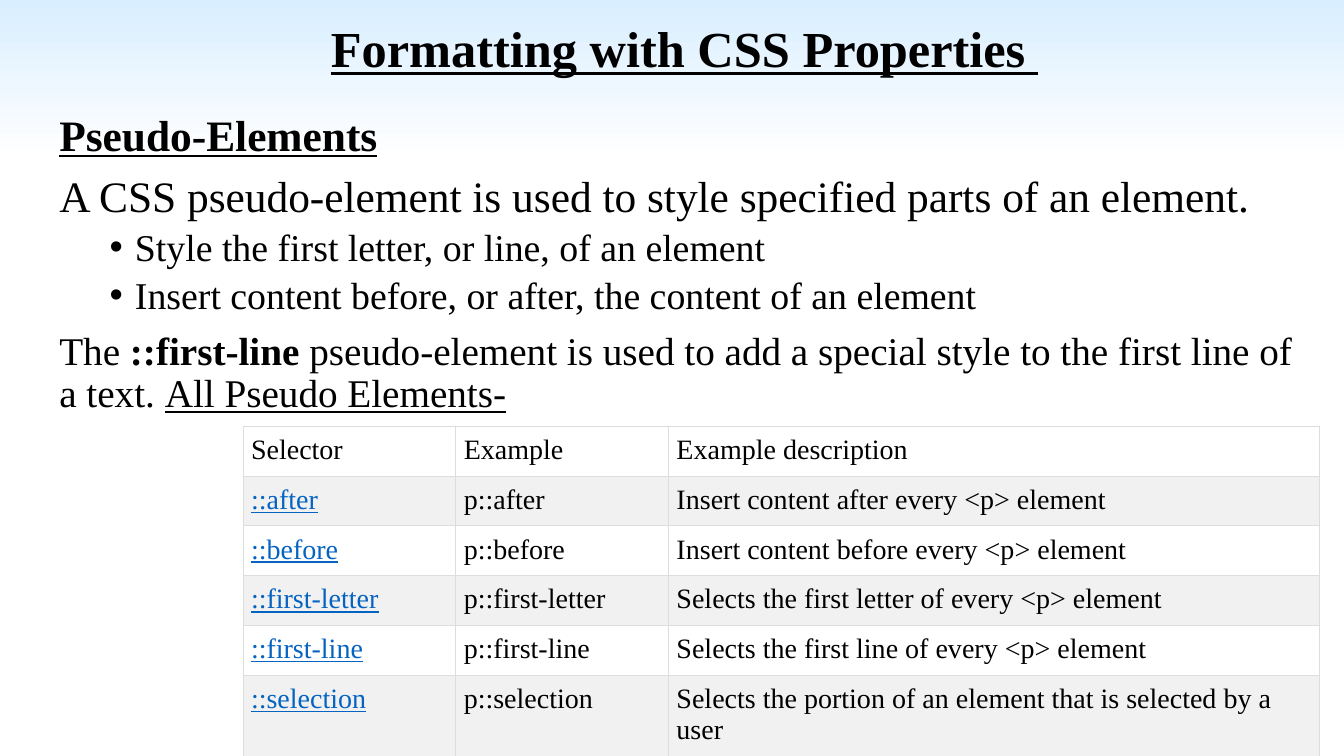
from lxml import etree
from pptx import Presentation, util as u
from pptx.dml.color import RGBColor
from pptx.enum import text
from pptx.oxml import ns, parse_xml

FONT = "Times New Roman"
BLACK, LINK, GRID = "000000", "0563C1", "DDDDDD"
SKY, WHITE, BAND = "D9EEFF", "FFFFFF", "F1F1F1"

HEADING = "Formatting with CSS Properties "
PLAIN, BOLD, UNDERLINED, STRONG = (False, False), (True, False), (False, True), (True, True)
EXPLANATION = [
    (0, 31, [("Pseudo-Elements", STRONG)]),
    (0, 31, [("A CSS pseudo-element is used to style specified parts of an element.", PLAIN)]),
    (1, 27, [("Style the first letter, or line, of an element", PLAIN)]),
    (1, 27, [("Insert content before, or after, the content of an element", PLAIN)]),
    (0, 28, [
        ("The ", PLAIN),
        ("::first-line ", BOLD),
        ("pseudo-element is used to add a special style to the first line of a text. ", PLAIN),
        ("All Pseudo Elements-", UNDERLINED),
    ]),
]
SELECTORS = [
    ("Selector", "Example", "Example description"),
    ("::after", "p::after", "Insert content after every <p> element"),
    ("::before", "p::before", "Insert content before every <p> element"),
    ("::first-letter", "p::first-letter", "Selects the first letter of every <p> element"),
    ("::first-line", "p::first-line", "Selects the first line of every <p> element"),
    ("::selection", "p::selection", "Selects the portion of an element that is selected by a user"),
]
COLUMN_WIDTHS = (2.11, 2.11, 6.46)
ROW_HEIGHTS = (0.33, 0.41, 0.41, 0.41, 0.41, 0.54)
MARGIN, TEXT_WIDTH = 0.49, 12.6


def colour(value):
    return RGBColor.from_string(value)


def style(run, size, weight=PLAIN, ink=BLACK):
    run.font.name = FONT
    run.font.size = u.Pt(size)
    run.font.bold, run.font.underline = weight
    run.font.color.rgb = colour(ink)


def add_bullet(paragraph):
    props = paragraph._p.get_or_add_pPr()
    props.set("marL", str(u.Inches(0.75)))
    props.set("indent", str(u.Inches(-0.25)))
    etree.SubElement(props, ns.qn("a:buFont")).set("typeface", "Arial")
    etree.SubElement(props, ns.qn("a:buChar")).set("char", "•")


def add_borders(cell):
    for side in ("lnL", "lnR", "lnT", "lnB"):
        cell._tc.get_or_add_tcPr().append(parse_xml(
            f'<a:{side} {ns.nsdecls("a")} w="{u.Pt(0.75)}"><a:solidFill>'
            f'<a:srgbClr val="{GRID}"/></a:solidFill></a:{side}>'))


def paint_background(slide):
    fill = slide.background.fill
    fill.gradient()
    fill.gradient_angle = 270
    for stop, position, value in zip(fill.gradient_stops, (0, 0.21), (SKY, WHITE)):
        stop.position = position
        stop.color.rgb = colour(value)


def add_heading(slide):
    heading = slide.shapes.title
    heading.left, heading.top, heading.width, heading.height = map(
        u.Inches, (MARGIN, 0.19, TEXT_WIDTH, 0.64))
    frame = heading.text_frame
    frame.text = HEADING
    frame.word_wrap = True
    frame.auto_size = text.MSO_AUTO_SIZE.NONE
    frame.vertical_anchor = text.MSO_ANCHOR.BOTTOM
    line = frame.paragraphs[0]
    line.alignment = text.PP_ALIGN.CENTER
    line.line_spacing = 0.9
    style(line.runs[0], 36, STRONG)


def add_explanation(slide):
    frame = slide.shapes.add_textbox(
        *map(u.Inches, (MARGIN, 1.08, TEXT_WIDTH, 6.68))).text_frame
    frame.word_wrap = True
    for index, (level, size, pieces) in enumerate(EXPLANATION):
        paragraph = frame.add_paragraph() if index else frame.paragraphs[0]
        paragraph.level = level
        paragraph.line_spacing = 0.9
        paragraph.space_before = u.Pt((5 if level else 10) if index else 0)
        if level:
            add_bullet(paragraph)
        for words, weight in pieces:
            run = paragraph.add_run()
            run.text = words
            style(run, size, weight)


def add_selectors(slide):
    table = slide.shapes.add_table(
        len(SELECTORS), len(COLUMN_WIDTHS),
        *map(u.Inches, (2.41, 4.23, sum(COLUMN_WIDTHS), sum(ROW_HEIGHTS)))).table
    table.first_row = table.horz_banding = False
    for column, width in zip(table.columns, COLUMN_WIDTHS):
        column.width = u.Inches(width)
    for r, (row, height, entries) in enumerate(zip(table.rows, ROW_HEIGHTS, SELECTORS)):
        row.height = u.Inches(height)
        for c, (cell, entry) in enumerate(zip(row.cells, entries)):
            linked = r > 0 and c == 0
            cell.text = entry
            cell.margin_left = cell.margin_right = u.Inches(0.08)
            cell.margin_top = cell.margin_bottom = u.Inches(0.08)
            add_borders(cell)
            cell.fill.solid()
            cell.fill.fore_color.rgb = colour(BAND if r % 2 else WHITE)
            style(cell.text_frame.paragraphs[0].runs[0], 20,
                  UNDERLINED if linked else PLAIN, LINK if linked else BLACK)


def main():
    deck = Presentation()
    deck.slide_width, deck.slide_height = u.Inches(13.33), u.Inches(7.5)
    slide = deck.slides.add_slide(deck.slide_layouts[5])
    paint_background(slide)
    add_heading(slide)
    add_explanation(slide)
    add_selectors(slide)
    deck.save("out.pptx")


if __name__ == "__main__":
    main()
